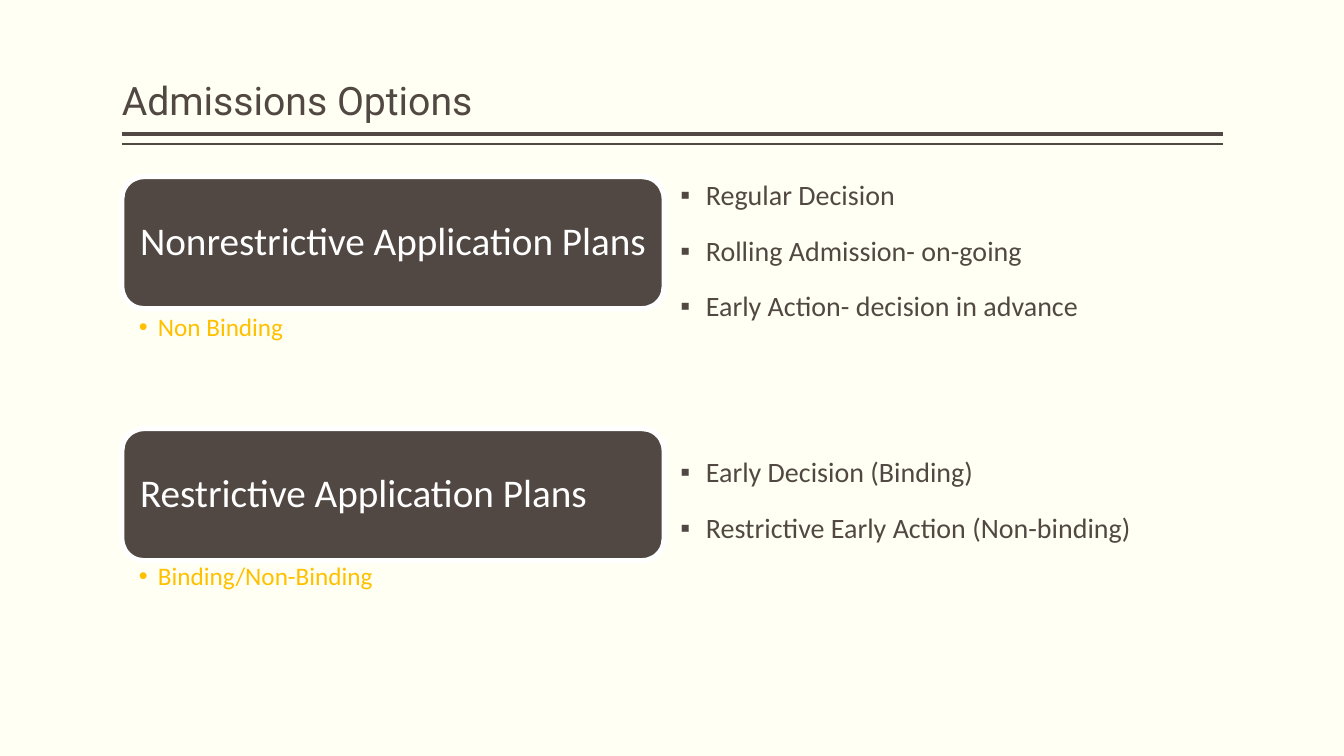
from dataclasses import dataclass

from lxml.etree import SubElement
from pptx import Presentation
from pptx.dml.color import RGBColor as RGB
from pptx.enum.shapes import MSO_CONNECTOR as CONN, MSO_SHAPE as SHAPE
from pptx.enum.text import MSO_ANCHOR as ANCHOR, PP_ALIGN as ALIGN
from pptx.oxml.ns import qn
from pptx.util import Cm, Pt


@dataclass(frozen=True)
class Theme:
    paper: str = "FFFFF3"
    ink: str = "514843"
    white: str = "FFFFFF"
    accent: str = "FFC000"
    title_font: str = "Roboto"
    body_font: str = "Calibri"
    heading_size: int = 28
    body_size: int = 20
    note_size: int = 18


def write(tf, lines, *, size, color, font, bullet=None, indent=0.0,
          before=0, anchor=ANCHOR.TOP, insets=(0, 0.13, 0, 0.13)):
    """Fill a text frame with one paragraph per line."""
    tf.word_wrap = True
    tf.vertical_anchor = anchor
    tf.margin_left, tf.margin_top, tf.margin_right, tf.margin_bottom = map(Cm, insets)
    for i, line in enumerate(lines):
        p = tf.add_paragraph() if i else tf.paragraphs[0]
        p.alignment = ALIGN.LEFT
        p.line_spacing = 0.9
        p.space_before = Pt(before)
        r = p.add_run()
        r.text = line
        r.font.size, r.font.name = Pt(size), font
        r.font.color.rgb = RGB.from_string(color)
        if bullet:
            pPr = p._p.get_or_add_pPr()
            pPr.set("marL", str(Cm(indent)))
            pPr.set("indent", str(-Cm(indent)))
            SubElement(pPr, qn("a:buFont"), typeface="Arial")
            SubElement(pPr, qn("a:buChar"), char=bullet)


class Deck:
    def __init__(self, theme):
        self.theme = theme
        self.prs = Presentation()
        self.prs.slide_width, self.prs.slide_height = Cm(33.87), Cm(19.05)
        self.s = self.prs.slides.add_slide(self.prs.slide_layouts[6])
        fill = self.s.background.fill
        fill.solid()
        fill.fore_color.rgb = RGB.from_string(theme.paper)

    def rule(self, x, y, w, weight):
        ln = self.s.shapes.add_connector(CONN.STRAIGHT, Cm(x), Cm(y), Cm(x + w), Cm(y))
        ln.line.color.rgb = RGB.from_string(self.theme.ink)
        ln.line.width = Pt(weight)
        SubElement(ln._element.spPr, qn("a:effectLst"))

    def text(self, x, y, w, h, lines, **fmt):
        sp = self.s.shapes.add_textbox(Cm(x), Cm(y), Cm(w), Cm(h))
        write(sp.text_frame, lines, **fmt)

    def card(self, x, y, w, h, label):
        t = self.theme
        sp = self.s.shapes.add_shape(SHAPE.ROUNDED_RECTANGLE, Cm(x), Cm(y), Cm(w), Cm(h))
        sp.shadow.inherit = False
        sp.fill.solid()
        sp.fill.fore_color.rgb = RGB.from_string(t.ink)
        sp.line.color.rgb = RGB.from_string(t.white)
        sp.line.width = Pt(3.78)
        write(sp.text_frame, [label], size=t.heading_size, color=t.white,
              font=t.body_font, anchor=ANCHOR.MIDDLE, insets=(0.3,) * 4)


def main():
    t = Theme()
    deck = Deck(t)
    left, width = 3.07, 27.74
    right, col_w, card_h = 17.15, 13.67, 3.33

    # Title and double rule
    deck.rule(left, 3.38, width, 3)
    deck.rule(left, 3.63, width, 1)
    deck.text(left, 0.2, width, 3.05, ["Admissions Options"], size=t.heading_size,
              color=t.ink, font=t.title_font, anchor=ANCHOR.BOTTOM)

    # Plan groups: card, note below it, options beside it
    plans = [
        (4.45, "Nonrestrictive Application Plans", 7.85, "Non Binding", 4.45,
         ["Regular Decision", "Rolling Admission- on-going",
          "Early Action- decision in advance"]),
        (10.8, "Restrictive Application Plans", 14.12, "Binding/Non-Binding", 11.43,
         ["Early Decision (Binding)", "Restrictive Early Action (Non-binding)"]),
    ]
    for card_y, label, note_y, note, options_y, options in plans:
        deck.card(left, card_y, col_w, card_h, label)
        deck.text(left, note_y, col_w, 2.95, [note], size=t.note_size, color=t.accent,
                  font=t.body_font, bullet="•", indent=0.48,
                  insets=(0.43, 0.08, 0.36, 0.08))
        deck.text(right, options_y, col_w, 5, options, size=t.body_size, color=t.ink,
                  font=t.body_font, bullet="▪", indent=0.64, before=18)

    deck.prs.save("out.pptx")


if __name__ == "__main__":
    main()
